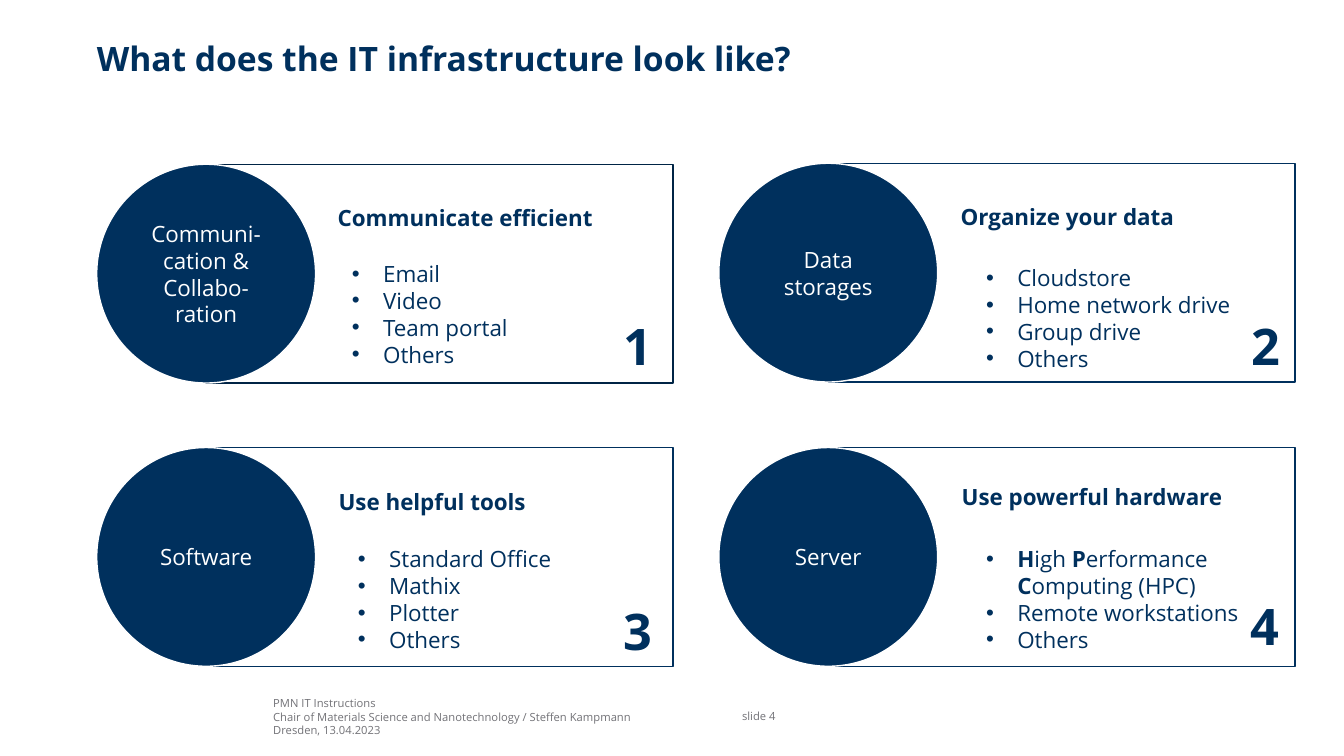
from dataclasses import dataclass

from lxml.etree import SubElement
from pptx import Presentation
from pptx.dml.color import RGBColor as Rgb
from pptx.enum.shapes import MSO_SHAPE as Kind
from pptx.enum.text import MSO_ANCHOR as Anchor, MSO_AUTO_SIZE as Auto, PP_ALIGN as Align
from pptx.oxml.ns import qn
from pptx.util import Inches, Pt

NAVY, DARK, WHITE, GREY = "00305D", "002445", "FFFFFF", "727277"
DISC = 2.17  # circle diameter and card height

Spot = tuple[float, float]
Box = tuple[float, float, float, float]


@dataclass
class Card:
    at: Spot
    label: str
    head: str
    head_at: Spot
    items: list[str]  # asterisks enclose bold letters
    list_box: Box
    num_at: Spot
    edge: str = NAVY


CARDS = [
    Card((0.96, 1.63), "Communi-cation & Collabo-ration",
         "Communicate efficient", (3.25, 1.98),
         ["Email", "Video", "Team portal", "Others"],
         (3.39, 2.53, 3.08, 1.18), (6, 3.08), DARK),
    Card((7.13, 1.62), "Data storages",
         "Organize your data", (9.43, 1.97),
         ["Cloudstore", "Home network drive", "Group drive", "Others"],
         (9.68, 2.57, 3.16, 1.18), (12.23, 3.08)),
    Card((0.96, 4.44), "Software",
         "Use helpful tools", (3.26, 4.79),
         ["Standard Office", "Mathix", "Plotter", "Others"],
         (3.45, 5.36, 2.41, 1.18), (6, 5.9)),
    Card((7.13, 4.44), "Server",
         "Use powerful hardware", (9.44, 4.74),
         ["*H*igh *P*erformance *C*omputing (HPC)", "Remote workstations", "Others"],
         (9.68, 5.36, 3.16, 1.18), (12.22, 5.85)),
]


def color(code: str) -> Rgb:
    return Rgb.from_string(code)


def apply(obj, vals: dict) -> None:
    for key, val in vals.items():
        setattr(obj, key, val)


def place(shape, box: Box) -> None:
    apply(shape, dict(zip(("left", "top", "width", "height"), map(Inches, box))))


def bullet(para) -> None:
    props = para._p.get_or_add_pPr()
    props.set("marL", str(Inches(0.31)))
    props.set("indent", str(-Inches(0.31)))
    SubElement(props, qn("a:buFont")).set("typeface", "Arial")
    SubElement(props, qn("a:buChar")).set("char", "•")


def write(shape, lines: list[str], size: float, ink: str = NAVY, bold: bool = False,
          align=Align.LEFT, anchor=Anchor.TOP, inset: bool = True, dots: bool = False) -> None:
    frame = shape.text_frame
    apply(frame, {"word_wrap": True, "auto_size": Auto.NONE, "vertical_anchor": anchor})
    if not inset:
        sides = ("left", "top", "right", "bottom")
        apply(frame, {f"margin_{side}": 0 for side in sides})
    for i, line in enumerate(lines):
        para = frame.add_paragraph() if i else frame.paragraphs[0]
        apply(para, {"alignment": align, "space_before": Pt(0)})
        if dots:
            bullet(para)
        for j, part in enumerate(line.split("*")):
            if part:
                run = para.add_run()
                run.text = part
                apply(run.font, {"name": "Open Sans", "size": Pt(size),
                                 "bold": bold or j % 2 == 1})
                run.font.color.rgb = color(ink)


def text(slide, box: Box, lines: list[str], size: float, **form) -> None:
    write(slide.shapes.add_textbox(*map(Inches, box)), lines, size, **form)


def form(slide, kind, box: Box, edge: str, fill: str = ""):
    shape = slide.shapes.add_shape(kind, *map(Inches, box))
    shape.shadow.inherit = False
    if fill:
        shape.fill.solid()
        shape.fill.fore_color.rgb = color(fill)
    else:
        shape.fill.background()
    shape.line.color.rgb = color(edge)
    shape.line.width = Pt(1)
    return shape


def draw(slide, num: int, card: Card) -> None:
    x, y = card.at
    # Frame and circle
    form(slide, Kind.RECTANGLE, (x + DISC / 2, y, 4.63, DISC), card.edge)
    disc = form(slide, Kind.OVAL, (x, y, DISC, DISC), WHITE, NAVY)
    write(disc, [card.label], 16, WHITE, align=Align.CENTER, anchor=Anchor.MIDDLE)
    # Heading, list and number
    text(slide, (*card.head_at, 3.49, 0.37), [card.head], 16, bold=True)
    body = slide.placeholders[num]
    place(body, card.list_box)
    write(body, card.items, 16, dots=True)
    text(slide, (*card.num_at, 0.66, 0.71), [str(num)], 36, bold=True, align=Align.CENTER)


def main() -> None:
    deck = Presentation()
    apply(deck, {"slide_width": Inches(13.33), "slide_height": Inches(7.5)})
    # The comparison layout has a title and four bodies
    slide = deck.slides.add_slide(deck.slide_layouts.get_by_name("Comparison"))

    # Title
    title = slide.shapes.title
    place(title, (0.96, 0.38, 11.57, 0.75))
    write(title, ["What does the IT infrastructure look like?"], 24, bold=True, inset=False)

    # Cards
    for num, card in enumerate(CARDS, 1):
        draw(slide, num, card)

    # Footer
    text(slide, (2.71, 6.91, 4.9, 0.46),
         ["PMN IT Instructions",
          "Chair of Materials Science and Nanotechnology / Steffen Kampmann",
          "Dresden, 13.04.2023"], 8, ink=GREY, inset=False)
    text(slide, (7.36, 7.04, 0.77, 0.16), ["slide 4"], 8, ink=GREY, inset=False)

    deck.save("out.pptx")


if __name__ == "__main__":
    main()
